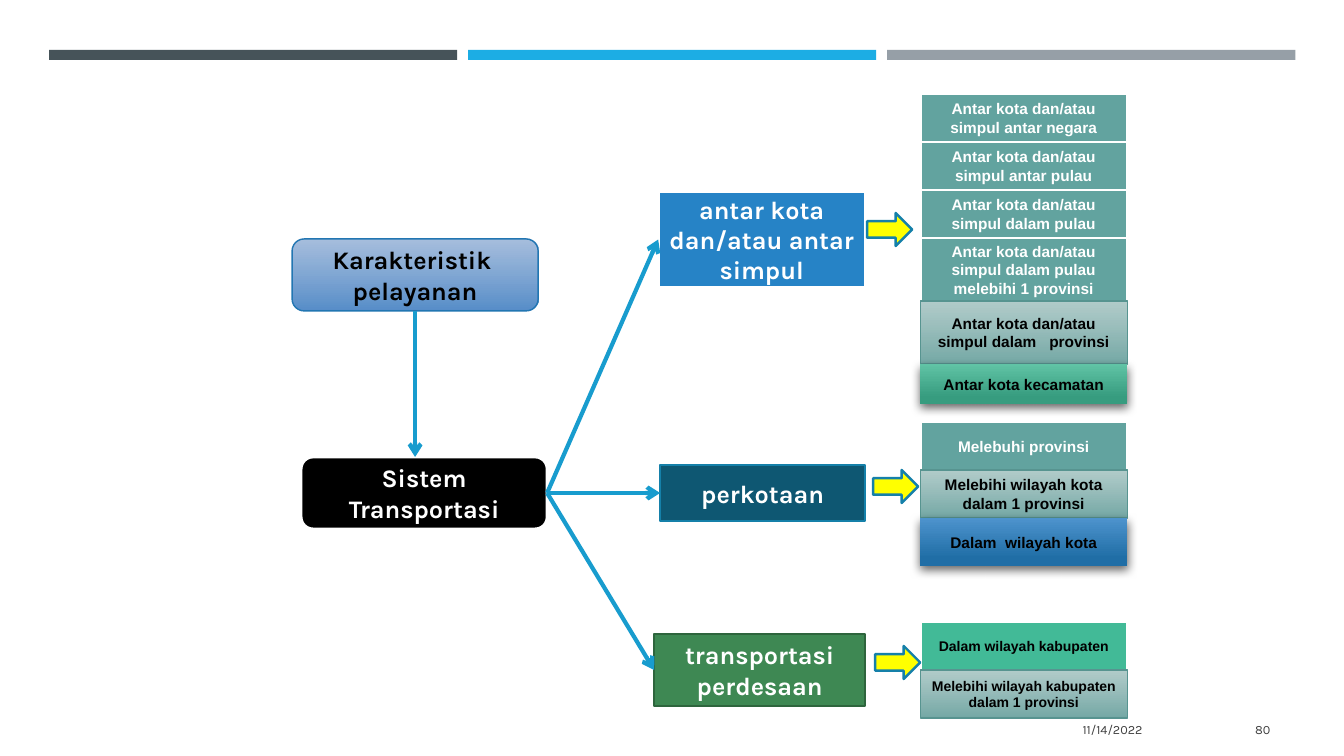
import pptx
import pptx.util
import pptx.dml.color
import pptx.enum.shapes
import pptx.enum.text
import pptx.oxml
import pptx.oxml.ns
from lxml import etree

# Content: name -> text, shape, place in px, style
BOXES = {
    "system": ("Sistem Transportasi", "round", (301, 457, 246, 72), "black"),
    "city": ("antar kota dan/atau antar simpul", "rect", (658, 192, 207, 95), "blue"),
    "urban": ("perkotaan", "rect", (660, 465, 205, 56), "navy"),
    "rural": ("transportasi perdesaan", "rect", (654, 634, 211, 72), "green"),
    "service": ("Karakteristik  pelayanan", "round", (292, 239, 246, 72), "sky"),
}
TARGETS = ["city", "urban", "rural"]
# Stacks: top, type size, rows of (text, height, style)
STACKS = [
    (94, "row", [
        ("Antar kota dan/atau simpul antar negara", 48, "teal"),
        ("Antar kota dan/atau simpul antar pulau", 48, "teal"),
        ("Antar kota dan/atau simpul dalam pulau", 48, "teal"),
        ("Antar kota dan/atau simpul dalam pulau melebihi 1 provinsi", 63, "teal"),
        ("Antar kota dan/atau simpul dalam   provinsi", 63, "mist"),
        ("Antar kota kecamatan", 40, "jade"),
    ]),
    (422, "row", [
        ("Melebuhi provinsi", 48, "teal"),
        ("Melebihi wilayah kota dalam 1 provinsi", 48, "mist"),
        ("Dalam  wilayah kota", 48, "azure"),
    ]),
    (622, "small", [
        ("Dalam wilayah kabupaten", 48, "mint"),
        ("Melebihi wilayah kabupaten dalam 1 provinsi", 48, "mist"),
    ]),
]
ARROWS = [(867, 213), (873, 470), (875, 646)]
FOOTER = [("11/14/2022", (839, 709, 313, 40)), ("80", (1164, 709, 116, 40))]

# Theme; style: fill or gradient (first, last, end %, first alpha %),
# line (colour, pt), text colour, shadow
THEME = {
    "bars": ["465359", "1CADE4", "969FA7"],
    "link": ("189CCE", 3),
    "foot": "404040",
    "fonts": {"box": ("Karla", 18), "row": ("Arial", 11),
              "small": ("Arial", 10), "foot": ("Karla", 9)},
    "styles": {
        "black": ("000000", ("FFFFFF", 2), "FFFFFF", False),
        "blue": ("2683C6", ("FFFFFF", 2), "FFFFFF", False),
        "navy": ("0E5772", ("1580A9", 1.75), "FFFFFF", False),
        "green": ("3E8853", ("2E653D", 1.75), "FFFFFF", False),
        "sky": (("9DB7DA", "578EC9", 100, 90), ("2276B2", 1), "000000", False),
        "teal": ("62A39F", ("FFFFFF", 2), "FFFFFF", False),
        "mist": (("AAC7C5", "75A9A6", 100, 90), ("579490", 1), "000000", False),
        "jade": (("60C3A5", "379C7F", 84, 100), None, "000000", True),
        "azure": (("4D93CD", "206EA6", 84, 100), None, "000000", True),
        "mint": ("42BA97", ("FFFFFF", 2), "000000", False),
        "arrow": ("FFFF00", ("1580A9", 1.75), "000000", False),
    },
}
SCALE = 914400 / 100.8  # EMU per px
ROW_X, ROW_W = 920, 207
BAR_X, BAR_Y, BAR_W, BAR_H, BAR_STEP = 49, 50, 408, 10, 419

Pt = pptx.util.Pt
Rgb = pptx.dml.color.RGBColor.from_string
qn = pptx.oxml.ns.qn
Kind = pptx.enum.shapes.MSO_SHAPE
Align = pptx.enum.text.PP_ALIGN
KINDS = {"rect": Kind.RECTANGLE, "round": Kind.ROUNDED_RECTANGLE,
         "arrow": Kind.RIGHT_ARROW}


def emu(*nums):
    return [round(n * SCALE) for n in nums]


def paint(shape, fill):
    if isinstance(fill, str):
        shape.fill.solid()
        shape.fill.fore_color.rgb = Rgb(fill)
        return
    first, last, end, alpha = fill
    shape.fill.gradient()
    shape.fill.gradient_angle = 270
    stops = shape.fill.gradient_stops
    for stop, color, pos in zip(stops, (first, last), (0, end / 100)):
        stop.color.rgb = Rgb(color)
        stop.position = pos
    if alpha < 100:
        color = next(shape.element.spPr.iter(qn("a:srgbClr")))
        etree.SubElement(color, qn("a:alpha"), val=str(alpha * 1000))


def shade(shape):
    root = shape.element.spPr.find(qn("a:effectLst"))
    drop = etree.SubElement(root, qn("a:outerShdw"), blurRad=str(Pt(7)),
                            dist=str(Pt(3)), dir="5040000", rotWithShape="0")
    color = etree.SubElement(drop, qn("a:srgbClr"), val="000000")
    etree.SubElement(color, qn("a:alpha"), val="60000")


def write(shape, text, font, color, align):
    frame = shape.text_frame
    frame.word_wrap = True
    frame.vertical_anchor = pptx.enum.text.MSO_ANCHOR.MIDDLE
    para = frame.paragraphs[0]
    para.text = text
    para.alignment = align
    name, size = THEME["fonts"][font]
    para.font.name, para.font.size = name, Pt(size)
    para.font.bold = font != "foot"
    para.font.color.rgb = Rgb(color)


def block(slide, kind, place, fill, line=None):
    shape = slide.shapes.add_shape(KINDS[kind], *emu(*place))
    paint(shape, fill)
    if line:
        shape.line.color.rgb, shape.line.width = Rgb(line[0]), Pt(line[1])
    else:
        shape.line.fill.background()
    shape.shadow.inherit = False
    return shape


def label(slide, text, kind, place, style, font):
    fill, line, color, drop = THEME["styles"][style]
    shape = block(slide, kind, place, fill, line)
    if drop:
        shade(shape)
    write(shape, text, font, color, Align.CENTER)
    return shape


def link(slide, start, side, goal=None, point=(0, 0)):
    straight = pptx.enum.shapes.MSO_CONNECTOR.STRAIGHT
    line = slide.shapes.add_connector(straight, 0, 0, *emu(*point))
    line.begin_connect(start, side)
    if goal is not None:
        line.end_connect(goal, 1)
    color, width = THEME["link"]
    line.line.color.rgb, line.line.width = Rgb(color), Pt(width)
    etree.SubElement(line.line._get_or_add_ln(), qn("a:tailEnd"), type="arrow")
    etree.SubElement(line._element.spPr, qn("a:effectLst"))


def main():
    deck = pptx.Presentation()
    deck.slide_width = pptx.util.Inches(13.33)
    deck.slide_height = pptx.util.Inches(7.5)
    slide = deck.slides.add_slide(deck.slide_layouts[6])

    # Top bars
    for i, color in enumerate(THEME["bars"]):
        block(slide, "rect", (BAR_X + i * BAR_STEP, BAR_Y, BAR_W, BAR_H), color)

    # Main boxes and their links
    nodes = {name: label(slide, *box, "box") for name, box in BOXES.items()}
    for name in TARGETS:
        link(slide, nodes["system"], 3, nodes[name])
    link(slide, nodes["service"], 2, point=(415, 457))

    # Stacked rows
    for top, font, rows in STACKS:
        for text, high, style in rows:
            label(slide, text, "rect", (ROW_X, top, ROW_W, high), style, font)
            top += high

    # Block arrows
    for x, y in ARROWS:
        block(slide, "arrow", (x, y, 45, 33), *THEME["styles"]["arrow"][:2])

    # Footer
    for text, place in FOOTER:
        box = slide.shapes.add_textbox(*emu(*place))
        write(box, text, "foot", THEME["foot"], Align.RIGHT)

    deck.save("out.pptx")


if __name__ == "__main__":
    main()
